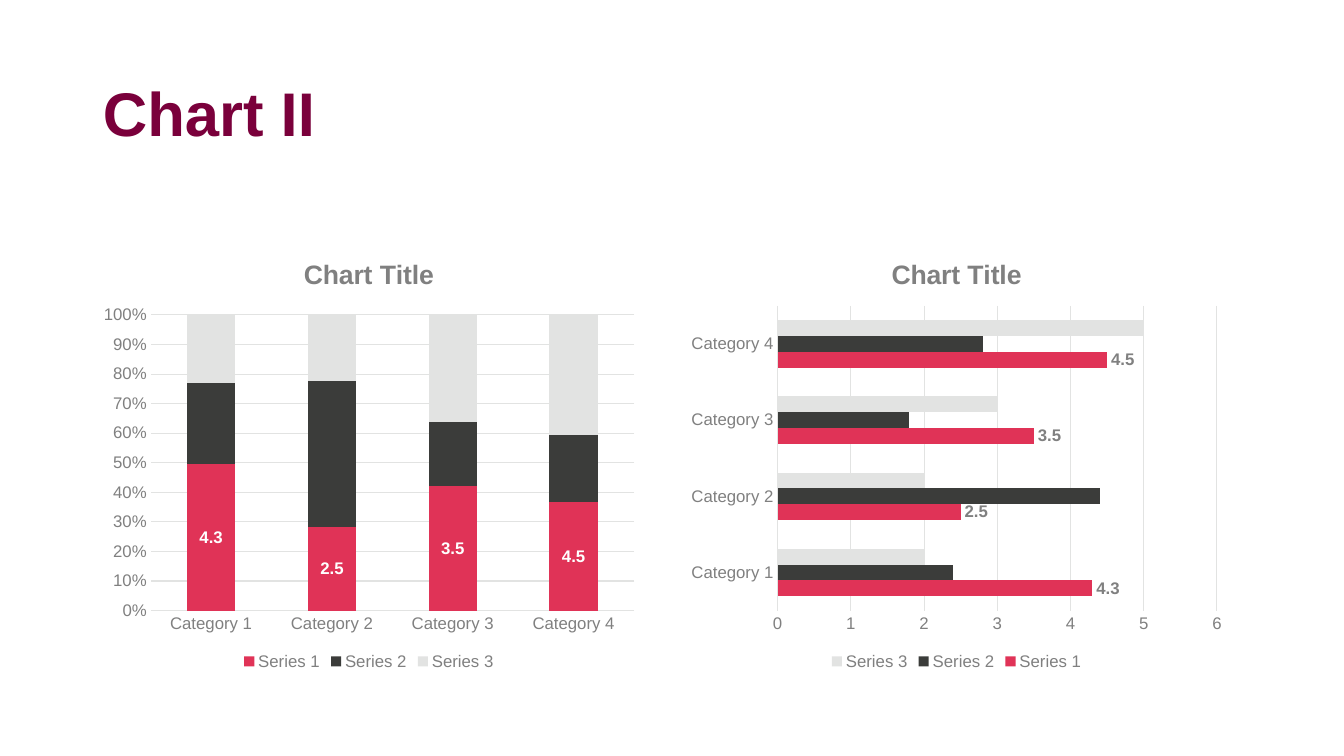
"""Build a slide with a stacked column chart beside a clustered bar chart."""
from dataclasses import dataclass
from pptx import Presentation
from pptx.chart.data import CategoryChartData
from pptx.dml.color import RGBColor
from pptx.enum import chart as ch, text as tx
from pptx.util import Pt

TITLE = "Chart II"
HEAD = "Chart Title"
CATS = ["Category 1", "Category 2", "Category 3", "Category 4"]
DATA = {
    "Series 1": (4.3, 2.5, 3.5, 4.5),
    "Series 2": (2.4, 4.4, 1.8, 2.8),
    "Series 3": (2, 2, 3, 5),
}
CHARTS = [
    dict(kind=ch.XL_CHART_TYPE.COLUMN_STACKED_100, gap=150, lap=100, top=1, step=0.1,
         form="0%", spot=ch.XL_LABEL_POSITION.CENTER, ink="FFFFFF"),
    dict(kind=ch.XL_CHART_TYPE.BAR_CLUSTERED, gap=182, lap=0, top=6, step=1,
         form="General", spot=ch.XL_LABEL_POSITION.OUTSIDE_END, ink="808080"),
]


@dataclass(frozen=True)
class Theme:
    """Hold colours and type sizes."""
    face: str = "Arial"
    plum: str = "7A003B"
    grey: str = "808080"
    rule: str = "E2E3E2"
    fills: tuple = ("E03357", "3B3C3A", "E2E3E2")
    title: float = 44
    head: float = 19
    label: float = 12
    thin: float = 0.75


T = Theme()
LEFT, TOP, WIDE, HIGH, STEP = 66.24, 169.92, 394.56, 311.76, 419.76


def style(font, size, ink, bold=False):
    """Set face, size, colour and weight of a font."""
    font.name, font.size, font.bold = T.face, Pt(size), bold
    font.color.rgb = RGBColor.from_string(ink)


def rule(line):
    """Draw a thin pale line."""
    line.color.rgb = RGBColor.from_string(T.rule)
    line.width = Pt(T.thin)


def add_axes(chart, conf):
    """Format both axes of a chart."""
    cat, val = chart.category_axis, chart.value_axis
    for axis in (cat, val):
        axis.major_tick_mark = axis.minor_tick_mark = ch.XL_TICK_MARK.NONE
        style(axis.tick_labels.font, T.label, T.grey)
    rule(cat.format.line)
    val.format.line.fill.background()
    val.has_major_gridlines = True
    rule(val.major_gridlines.format.line)
    val.minimum_scale, val.maximum_scale = 0, conf["top"]
    val.major_unit = conf["step"]
    val.tick_labels.number_format = conf["form"]
    val.tick_labels.number_format_is_linked = False


def add_plot(slide, left, conf):
    """Place one chart with its title, legend, bars and labels."""
    data = CategoryChartData()
    data.categories = CATS
    for name, vals in DATA.items():
        data.add_series(name, vals)
    chart = slide.shapes.add_chart(
        conf["kind"], Pt(left), Pt(TOP), Pt(WIDE), Pt(HIGH), data).chart
    style(chart.font, T.label, T.grey)
    chart.has_title = True
    frame = chart.chart_title.text_frame
    frame.text = HEAD
    style(frame.paragraphs[0].runs[0].font, T.head, T.grey, True)
    chart.chart_title.include_in_layout = False
    chart.has_legend = True
    chart.legend.position = ch.XL_LEGEND_POSITION.BOTTOM
    chart.legend.include_in_layout = False
    style(chart.legend.font, T.label, T.grey)
    add_axes(chart, conf)
    plot = chart.plots[0]
    plot.vary_by_categories = False
    plot.gap_width, plot.overlap = conf["gap"], conf["lap"]
    for bars, ink in zip(plot.series, T.fills):
        bars.format.fill.solid()
        bars.format.fill.fore_color.rgb = RGBColor.from_string(ink)
        bars.invert_if_negative = False
    tags = plot.series[0].data_labels
    tags.show_value, tags.position = True, conf["spot"]
    style(tags.font, T.label, conf["ink"], True)


def main():
    """Build and save the slide."""
    deck = Presentation()
    deck.slide_width, deck.slide_height = Pt(960), Pt(540)
    slide = deck.slides.add_slide(deck.slide_layouts[5])
    title = slide.shapes.title
    title.left, title.top, title.width, title.height = map(Pt, (LEFT, 56.16, 703.44, 104.4))
    frame = title.text_frame
    frame.text = TITLE
    frame.vertical_anchor = tx.MSO_ANCHOR.TOP
    para = frame.paragraphs[0]
    para.alignment, para.line_spacing = tx.PP_ALIGN.LEFT, 0.9
    style(para.runs[0].font, T.title, T.plum, True)
    for i, conf in enumerate(CHARTS):
        add_plot(slide, LEFT + i * STEP, conf)
    deck.save("out.pptx")


if __name__ == "__main__":
    main()
